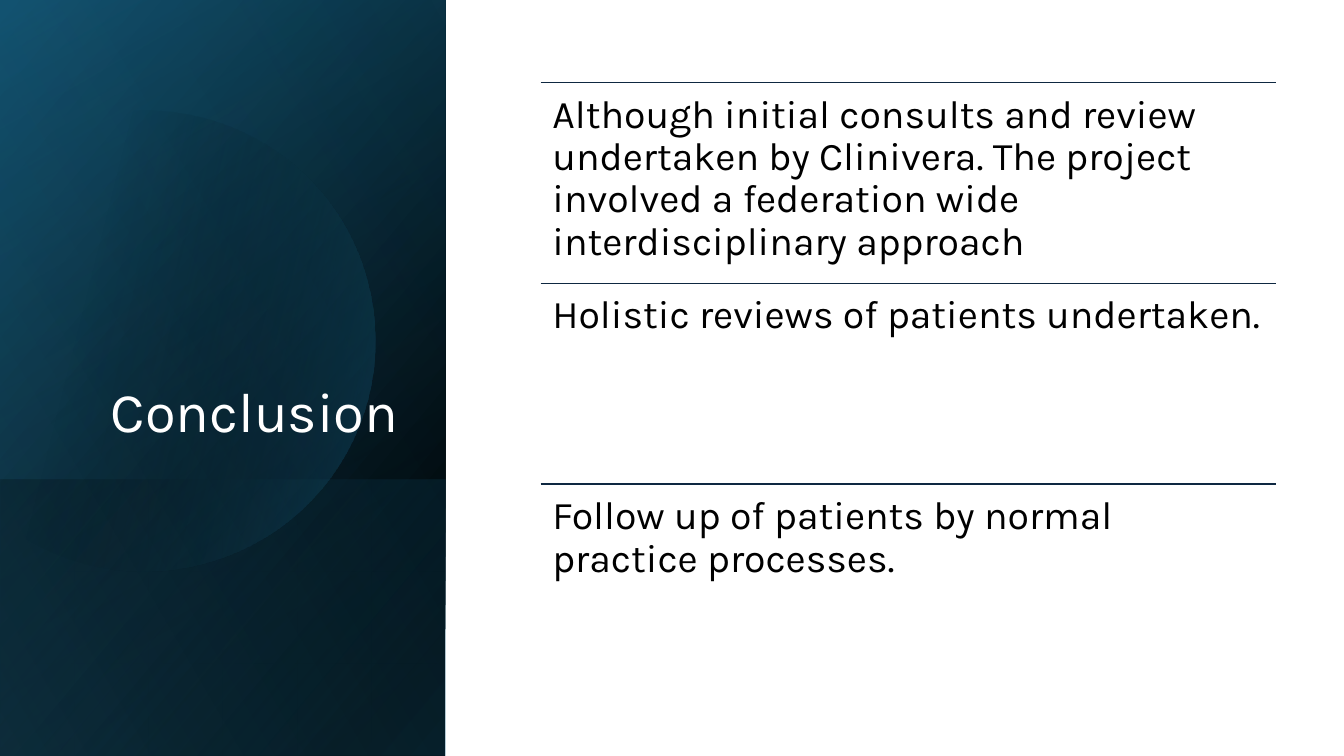
from lxml import etree
from pptx import Presentation
from pptx.dml.color import RGBColor
from pptx.enum.shapes import MSO_CONNECTOR, MSO_SHAPE
from pptx.enum.text import MSO_ANCHOR, PP_ALIGN
from pptx.oxml import parse_xml
from pptx.oxml.ns import nsdecls, qn
from pptx.util import Pt

RECT = MSO_SHAPE.RECTANGLE
LINE = MSO_CONNECTOR.STRAIGHT
BOTTOM, TOP = MSO_ANCHOR.BOTTOM, MSO_ANCHOR.TOP
LEFT, RIGHT = PP_ALIGN.LEFT, PP_ALIGN.RIGHT
WHITE = RGBColor(0xFF, 0xFF, 0xFF)
BLACK = RGBColor(0x00, 0x00, 0x00)
NAVY = RGBColor(0x0E, 0x28, 0x41)
DEEP = RGBColor(0x10, 0x48, 0x62)
TEAL = RGBColor(0x15, 0x60, 0x82)
SKY = RGBColor(0x46, 0xB1, 0xE1)
FONT = "Karla"

TITLE = "Conclusion"
POINTS = [
    "Although initial consults and review undertaken by Clinivera. "
    "The project involved a federation wide interdisciplinary approach",
    "Holistic reviews of patients undertaken.",
    "Follow up of patients by normal practice processes.",
]

WIDE, HIGH = 960, 540
SIDE = 318.2
FOOT = 197.3
ROW_X, ROW_Y, ROW_W, ROW_H = 386.2, 59, 525.2, 143.4

BACK = [
    (0, HIGH, True, 50, [(8, BLACK, 100), (100, DEEP, 100)]),
    (0, HIGH, True, 30, [(0, BLACK, 0), (99, TEAL, 46)]),
    (HIGH - FOOT, FOOT, False, 130, [(2, TEAL, 29), (100, BLACK, 30)]),
]
GLOW = (0, HIGH, True, 120, [(0, BLACK, 0), (99, SKY, 11)])

DISC_ANGLE = 14
DISC_STOPS = [(29, BLACK, 0), (100, TEAL, 43)]
DISC_START = (107.3, 79.2)
DISC_CURVES = [
    [(177.1, 80.6), (241.2, 127.4), (261.4, 198)],
    [(286.6, 285.8), (236.2, 376.6), (149, 401.8)],
    [(94.3, 417.6), (38.2, 403.9), (-2.2, 370.1)],
    [(-10.8, 362.2)],
    [(-10.8, 126)],
    [(0, 115.9)],
    [(16.6, 102.2), (36, 92.2), (57.6, 85.7)],
    [(74.2, 81.4), (90.7, 79.2), (107.3, 79.2)],
]
STEPS = 24


def shade(shape, angle, stops):
    shape.shadow.inherit = False
    shape.line.fill.background()
    shape.fill.background()
    grad = parse_xml(f'<a:gradFill {nsdecls("a")} rotWithShape="1"><a:gsLst/>'
                     f'<a:lin ang="{angle * 60000}" scaled="0"/></a:gradFill>')
    for pos, color, alpha in stops:
        stop = etree.SubElement(grad[0], qn("a:gs"), pos=str(pos * 1000))
        tint = etree.SubElement(stop, qn("a:srgbClr"), val=str(color))
        etree.SubElement(tint, qn("a:alpha"), val=str(alpha * 1000))
    props = shape._element.spPr
    props.replace(props.find(qn("a:noFill")), grad)


def add_panel(shapes, top, height, flip, angle, stops):
    left = (SIDE - height) / 2
    y = top + (height - SIDE) / 2
    panel = shapes.add_shape(RECT, Pt(left), Pt(y), Pt(height), Pt(SIDE))
    panel.rotation = 90
    if flip:
        panel._element.spPr.find(qn("a:xfrm")).set("flipH", "1")
    shade(panel, angle, stops)


def bend(start, one, two, end):
    for step in range(1, STEPS + 1):
        t = step / STEPS
        u = 1 - t
        yield tuple(u**3 * a + 3 * u * u * t * b + 3 * u * t * t * c + t**3 * d
                    for a, b, c, d in zip(start, one, two, end))


def add_disc(shapes):
    dots = [DISC_START]
    for curve in DISC_CURVES:
        dots.extend(bend(dots[-1], *curve) if len(curve) == 3 else curve)
    dots = [(Pt(x), Pt(y)) for x, y in dots]
    path = shapes.build_freeform(*dots[0])
    path.add_line_segments(dots[1:], close=True)
    shade(path.convert_to_shape(), DISC_ANGLE, DISC_STOPS)


def add_text(shapes, text, box, size, color, align, anchor, pads):
    frame = shapes.add_textbox(*map(Pt, box)).text_frame
    frame.word_wrap = True
    frame.vertical_anchor = anchor
    frame.margin_left = frame.margin_right = Pt(pads[0])
    frame.margin_top = frame.margin_bottom = Pt(pads[1])
    para = frame.paragraphs[0]
    para.text = text
    para.alignment = align
    para.line_spacing = 0.9
    para.font.name = FONT
    para.font.size = Pt(size)
    para.font.color.rgb = color


def add_rule(shapes, y):
    rule = shapes.add_connector(LINE, Pt(ROW_X), Pt(y), Pt(ROW_X + ROW_W), Pt(y))
    rule.line.color.rgb = NAVY
    rule.line.width = Pt(1)
    etree.SubElement(rule._element.spPr, qn("a:effectLst"))


def main():
    deck = Presentation()
    deck.slide_width, deck.slide_height = Pt(WIDE), Pt(HIGH)
    shapes = deck.slides.add_slide(deck.slide_layouts[6]).shapes
    for panel in BACK:
        add_panel(shapes, *panel)
    add_disc(shapes)
    add_panel(shapes, *GLOW)
    add_text(shapes, TITLE, (46.1, 132.5, 245.5, 188.6), 40, WHITE,
             RIGHT, BOTTOM, (7.2, 3.6))
    for row, text in enumerate(POINTS):
        y = ROW_Y + row * ROW_H
        add_rule(shapes, y)
        add_text(shapes, text, (ROW_X, y, ROW_W, ROW_H), 28, BLACK,
                 LEFT, TOP, (8.4, 8.4))
    deck.save("out.pptx")


if __name__ == "__main__":
    main()
